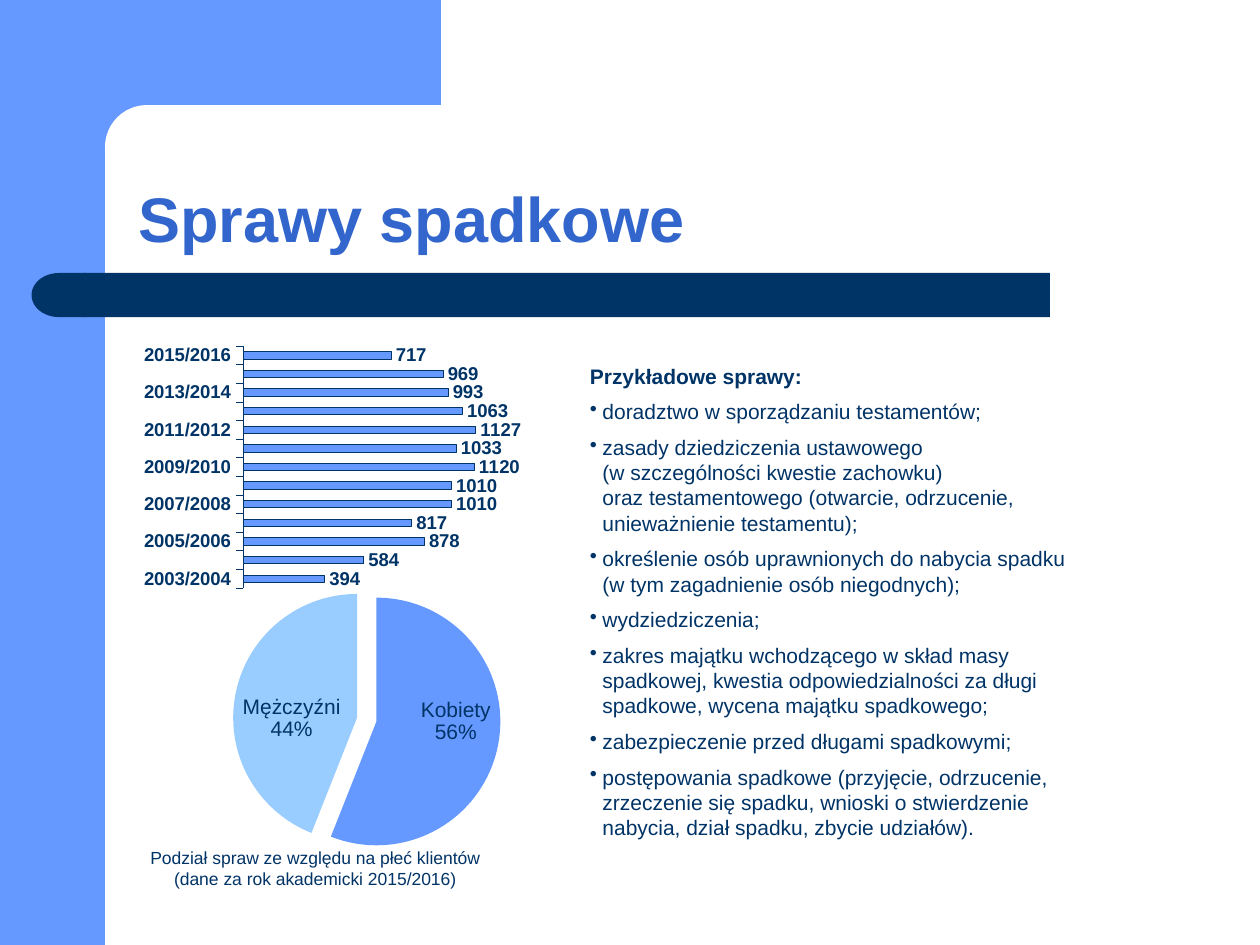
from typing import NamedTuple, Optional

from lxml.etree import SubElement
from pptx import Presentation
from pptx.chart.data import CategoryChartData
from pptx.dml.color import RGBColor
from pptx.enum.chart import XL_CHART_TYPE as ChartType
from pptx.enum.chart import XL_LABEL_POSITION as LabelPos
from pptx.enum.chart import XL_TICK_LABEL_POSITION as TickLabels
from pptx.enum.chart import XL_TICK_MARK as Tick
from pptx.enum.shapes import MSO_SHAPE as Shape
from pptx.enum.text import MSO_ANCHOR as Anchor
from pptx.enum.text import PP_ALIGN as Align
from pptx.oxml import parse_xml
from pptx.oxml.ns import nsdecls, qn
from pptx.util import Inches, Pt

BLUE = RGBColor(0x66, 0x99, 0xFF)
LIGHT_BLUE = RGBColor(0x99, 0xCC, 0xFF)
NAVY = RGBColor(0x00, 0x33, 0x66)
TITLE_BLUE = RGBColor(0x33, 0x66, 0xCC)
WHITE = RGBColor(0xFF, 0xFF, 0xFF)
FONT = "Arial"

# The slide is a grid of 120 columns by 90 rows of square cells.
COLUMNS, ROWS = 120, 90
CELL = Inches(10) / COLUMNS


class Box(NamedTuple):
    """Left, top, width and height in grid cells."""
    col: float
    row: float
    cols: float
    rows: float

    def emu(self) -> list[int]:
        return [round(cells * CELL) for cells in self]


class Panel(NamedTuple):
    box: Box
    color: RGBColor
    preset: Shape = Shape.RECTANGLE
    rounding: Optional[float] = None
    rotation: int = 0


class PlotArea(NamedTuple):
    """Inner plot area as shares of the chart frame."""
    x: float
    y: float
    w: float
    h: float


PANELS = [
    Panel(Box(0, 0, 10, 90), BLUE),
    Panel(Box(9, 0, 33, 14), BLUE),
    Panel(Box(10, 10, 67, 8), WHITE, Shape.ROUNDED_RECTANGLE, rounding=0.5),
    Panel(Box(8, 26, 92, 4.2), NAVY),
    Panel(Box(3, 26, 5.2, 4.2), NAVY, Shape.FLOWCHART_DELAY, rotation=180),
]

EXAMPLES = [
    "doradztwo w sporządzaniu testamentów;",
    "zasady dziedziczenia ustawowego \v(w szczególności kwestie zachowku) \v"
    "oraz testamentowego (otwarcie, odrzucenie, unieważnienie testamentu);",
    "określenie osób uprawnionych do nabycia spadku \v"
    "(w tym zagadnienie osób niegodnych);",
    "wydziedziczenia;",
    "zakres majątku wchodzącego w skład masy spadkowej, kwestia "
    "odpowiedzialności za długi spadkowe, wycena majątku spadkowego;",
    "zabezpieczenie przed długami spadkowymi;",
    "postępowania spadkowe (przyjęcie, odrzucenie, zrzeczenie się spadku, "
    "wnioski o stwierdzenie nabycia, dział spadku, zbycie udziałów).",
]

FIRST_YEAR = 2003
CASES = [394, 584, 878, 817, 1010, 1010, 1120, 1033, 1127, 1063, 993, 969, 717]
CLIENTS = {"Kobiety": 56, "Mężczyźni": 44}


def set_font(font, size: float, color: RGBColor = NAVY, bold: bool = False) -> None:
    font.name, font.size, font.bold = FONT, Pt(size), bold
    font.color.rgb = color


def add_panel(slide, panel: Panel) -> None:
    shape = slide.shapes.add_shape(panel.preset, *panel.box.emu())
    shape.shadow.inherit = False
    shape.fill.solid()
    shape.fill.fore_color.rgb = panel.color
    shape.line.fill.background()
    shape.rotation = panel.rotation
    if panel.rounding is not None:
        shape.adjustments[0] = panel.rounding


def add_frame(slide, box: Box, anchor: Anchor = Anchor.TOP):
    frame = slide.shapes.add_textbox(*box.emu()).text_frame
    frame.word_wrap = True
    frame.vertical_anchor = anchor
    return frame


def write(paragraph, text: str, *, size: float, color: RGBColor = NAVY,
          bold: bool = False, align: Align = Align.LEFT, before: float = 0,
          spacing: Optional[float] = None, bullet: bool = False) -> None:
    paragraph.text = text
    paragraph.alignment = align
    paragraph.space_before = Pt(before)
    if spacing:
        paragraph.line_spacing = spacing
    for run in paragraph.runs:
        set_font(run.font, size, color, bold)
    if bullet:
        properties = paragraph._p.get_or_add_pPr()
        properties.set("marL", str(Inches(0.1)))
        properties.set("indent", str(-Inches(0.1)))
        SubElement(properties, qn("a:buChar"), char="•")


def add_chart(slide, kind: ChartType, box: Box, categories, values, plot: PlotArea):
    data = CategoryChartData()
    data.categories = categories
    data.add_series("Series 1", values)
    chart = slide.shapes.add_chart(kind, *box.emu(), data).chart
    chart.has_legend = chart.has_title = False
    set_font(chart.font, 12)
    area = chart._chartSpace.chart.plotArea
    for layout in area.findall(qn("c:layout")):
        area.remove(layout)
    shares = "".join(f'<c:{side} val="{share}"/>' for side, share in plot._asdict().items())
    area.insert(0, parse_xml(
        f'<c:layout {nsdecls("c")}><c:manualLayout><c:layoutTarget val="inner"/>'
        f'<c:xMode val="edge"/><c:yMode val="edge"/>{shares}'
        '</c:manualLayout></c:layout>'))
    return chart


def add_case_bars(slide) -> None:
    years = [f"{year}/{year + 1}" for year in range(FIRST_YEAR, FIRST_YEAR + len(CASES))]
    chart = add_chart(slide, ChartType.BAR_CLUSTERED, Box(11.8, 30.8, 40.6, 26.8),
                      years, CASES, PlotArea(0.28, 0.08, 0.58, 0.86))
    year_axis, count_axis = chart.category_axis, chart.value_axis
    year_axis.major_tick_mark = Tick.OUTSIDE
    year_axis.tick_label_position = TickLabels.LOW
    year_axis.format.line.color.rgb = NAVY
    year_axis.format.line.width = Pt(0.15)
    set_font(year_axis.tick_labels.font, 10.6, bold=True)
    count_axis.visible = count_axis.has_major_gridlines = False
    count_axis.minimum_scale, count_axis.maximum_scale = 0, 1200

    bars = chart.plots[0]
    bars.gap_width = 150
    bars.vary_by_categories = False
    style = bars.series[0].format
    style.fill.solid()
    style.fill.fore_color.rgb = BLUE
    style.line.color.rgb = NAVY
    style.line.width = Pt(0.25)
    labels = bars.series[0].data_labels
    labels.show_value = True
    labels.position = LabelPos.OUTSIDE_END
    set_font(labels.font, 10.6, bold=True)


def add_client_pie(slide) -> None:
    chart = add_chart(slide, ChartType.PIE, Box(4, 54, 52, 28.8),
                      CLIENTS.keys(), CLIENTS.values(), PlotArea(0.35, 0.06, 0.49, 0.89))
    series = chart.plots[0].series[0]
    for index, color in enumerate((BLUE, LIGHT_BLUE)):
        slice_format = series.points[index].format
        slice_format.fill.solid()
        slice_format.fill.fore_color.rgb = color
        slice_format.line.fill.background()
    first_point = series._element.find(qn("c:dPt"))
    first_point.addprevious(parse_xml(f'<c:explosion {nsdecls("c")} val="8"/>'))
    labels = series.data_labels
    labels.show_value = False
    labels.show_percentage = labels.show_category_name = True
    labels.position = LabelPos.INSIDE_END
    set_font(labels.font, 12)
    separator = parse_xml(f'<c:separator {nsdecls("c")}>\n</c:separator>')
    labels._element.find(qn("c:showBubbleSize")).addnext(separator)


def main() -> None:
    deck = Presentation()
    deck.slide_width, deck.slide_height = round(COLUMNS * CELL), round(ROWS * CELL)
    slide = deck.slides.add_slide(deck.slide_layouts[6])
    for panel in PANELS:
        add_panel(slide, panel)

    title = add_frame(slide, Box(12, 10, 105, 15), Anchor.BOTTOM)
    write(title.paragraphs[0], "Sprawy spadkowe", size=36, color=TITLE_BLUE,
          bold=True, spacing=0.9)

    examples = add_frame(slide, Box(55, 34, 51.4, 48.5))
    write(examples.paragraphs[0], "Przykładowe sprawy:", size=12, bold=True, before=6)
    for example in EXAMPLES:
        write(examples.add_paragraph(), example, size=12, before=6, bullet=True)

    add_case_bars(slide)
    caption = add_frame(slide, Box(11.8, 80.1, 36.4, 5.2))
    write(caption.paragraphs[0], "Podział spraw ze względu na płeć klientów "
          "(dane za rok akademicki 2015/2016)", size=10, align=Align.CENTER, before=5)
    add_client_pie(slide)
    deck.save("out.pptx")


if __name__ == "__main__":
    main()
